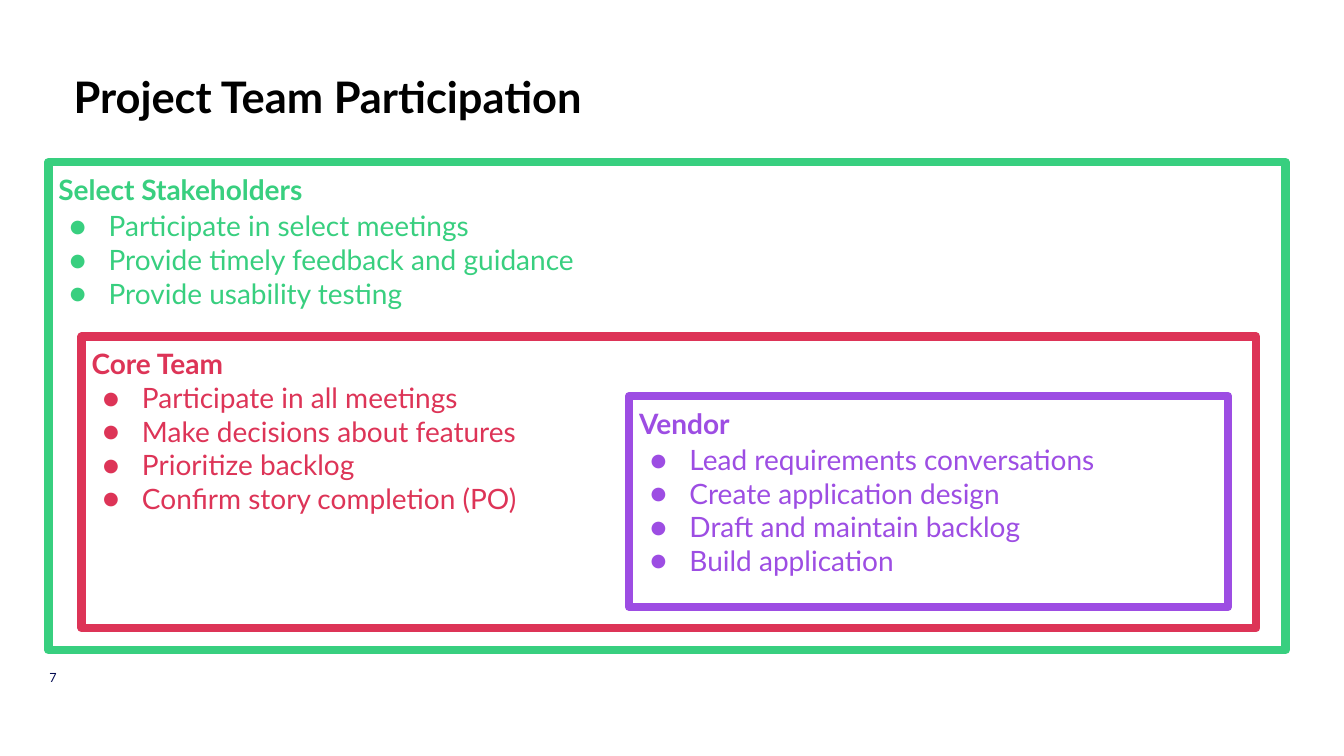
"""Build the project team participation slide."""
from dataclasses import dataclass

import lxml.etree
import pptx
import pptx.dml.color
import pptx.enum.shapes
import pptx.enum.text
import pptx.oxml.ns
import pptx.util

Inches = pptx.util.Inches
Pt = pptx.util.Pt
COLOURS = {
    "title": "000000",
    "number": "020A51",
    "stakeholders": "38CF7F",
    "core": "DD3457",
    "vendor": "9D4DE3",
}
FONT = "Lato"


@dataclass
class Group:
    """A framed group of participants and their duties."""

    name: str
    colour: str
    position: tuple[float, float, float, float]
    duties: list[str]
    gap: float = 0


GROUPS = [
    Group("Select Stakeholders", "stakeholders", (0.48, 1.61, 12.27, 4.84),
          ["Participate in select meetings", "Provide timely feedback and guidance",
           "Provide usability testing"], 2.1),
    Group("Core Team", "core", (0.81, 3.34, 11.65, 2.89),
          ["Participate in all meetings", "Make decisions about features",
           "Prioritize backlog", "Confirm story completion (PO)"]),
    Group("Vendor", "vendor", (6.24, 3.93, 5.94, 2.09),
          ["Lead requirements conversations", "Create application design",
           "Draft and maintain backlog", "Build application"], 1.8),
]


def colour_of(key: str) -> pptx.dml.color.RGBColor:
    """Return the named colour."""
    return pptx.dml.color.RGBColor.from_string(COLOURS[key])


def add_span(para, text: str, size: float, colour: str, bold: bool = False) -> None:
    """Add a formatted run to a left-aligned paragraph."""
    para.alignment = pptx.enum.text.PP_ALIGN.LEFT
    span = para.add_run()
    span.text = text
    span.font.name = FONT
    span.font.size = Pt(size)
    span.font.bold = bold
    span.font.color.rgb = colour_of(colour)


def set_frame(frame, anchor, side: float, top: float) -> None:
    """Set wrapping, anchor and insets of a text frame."""
    frame.word_wrap = True
    frame.auto_size = pptx.enum.text.MSO_AUTO_SIZE.NONE
    frame.vertical_anchor = anchor
    frame.margin_left = frame.margin_right = Inches(side)
    frame.margin_top = frame.margin_bottom = Inches(top)


def add_bullet(para, colour: str) -> None:
    """Give a paragraph a hanging coloured bullet."""
    qualify = pptx.oxml.ns.qn
    properties = para._p.get_or_add_pPr()
    properties.set("marL", str(Inches(0.5)))
    properties.set("indent", str(Inches(-0.39)))
    tint = lxml.etree.SubElement(properties, qualify("a:buClr"))
    lxml.etree.SubElement(tint, qualify("a:srgbClr"), val=COLOURS[colour])
    lxml.etree.SubElement(properties, qualify("a:buFont"), typeface=FONT)
    lxml.etree.SubElement(properties, qualify("a:buChar"), char="●")


def add_group(page, group: Group) -> None:
    """Draw a frame with its heading and bulleted duties."""
    box = page.shapes.add_shape(pptx.enum.shapes.MSO_SHAPE.RECTANGLE,
                                *map(Inches, group.position))
    box.shadow.inherit = False
    box.fill.background()
    box.line.color.rgb = colour_of(group.colour)
    box.line.width = Pt(6)
    frame = box.text_frame
    set_frame(frame, pptx.enum.text.MSO_ANCHOR.TOP, 0.1, 0.1)
    add_span(frame.paragraphs[0], group.name, 20, group.colour, True)
    for index, duty in enumerate(group.duties):
        para = frame.add_paragraph()
        add_bullet(para, group.colour)
        para.space_before = Pt(0 if index else group.gap)
        add_span(para, duty, 20, group.colour)


def main() -> None:
    """Build and save the deck."""
    deck = pptx.Presentation()
    deck.slide_width, deck.slide_height = Inches(13.33), Inches(7.5)
    page = deck.slides.add_slide(deck.slide_layouts[5])
    middle = pptx.enum.text.MSO_ANCHOR.MIDDLE

    title = page.shapes.title
    title.left, title.top, title.width, title.height = map(Inches, (0.6, 0.6, 12.39, 0.7))
    set_frame(title.text_frame, middle, 0.13, 0.07)
    add_span(title.text_frame.paragraphs[0], "Project Team Participation", 31, "title", True)

    number = page.shapes.add_textbox(*map(Inches, (0.42, 6.55, 0.73, 0.35)))
    set_frame(number.text_frame, middle, 0.07, 0.04)
    add_span(number.text_frame.paragraphs[0], "7", 9, "number")

    for group in GROUPS:
        add_group(page, group)
    deck.save("out.pptx")


if __name__ == "__main__":
    main()
